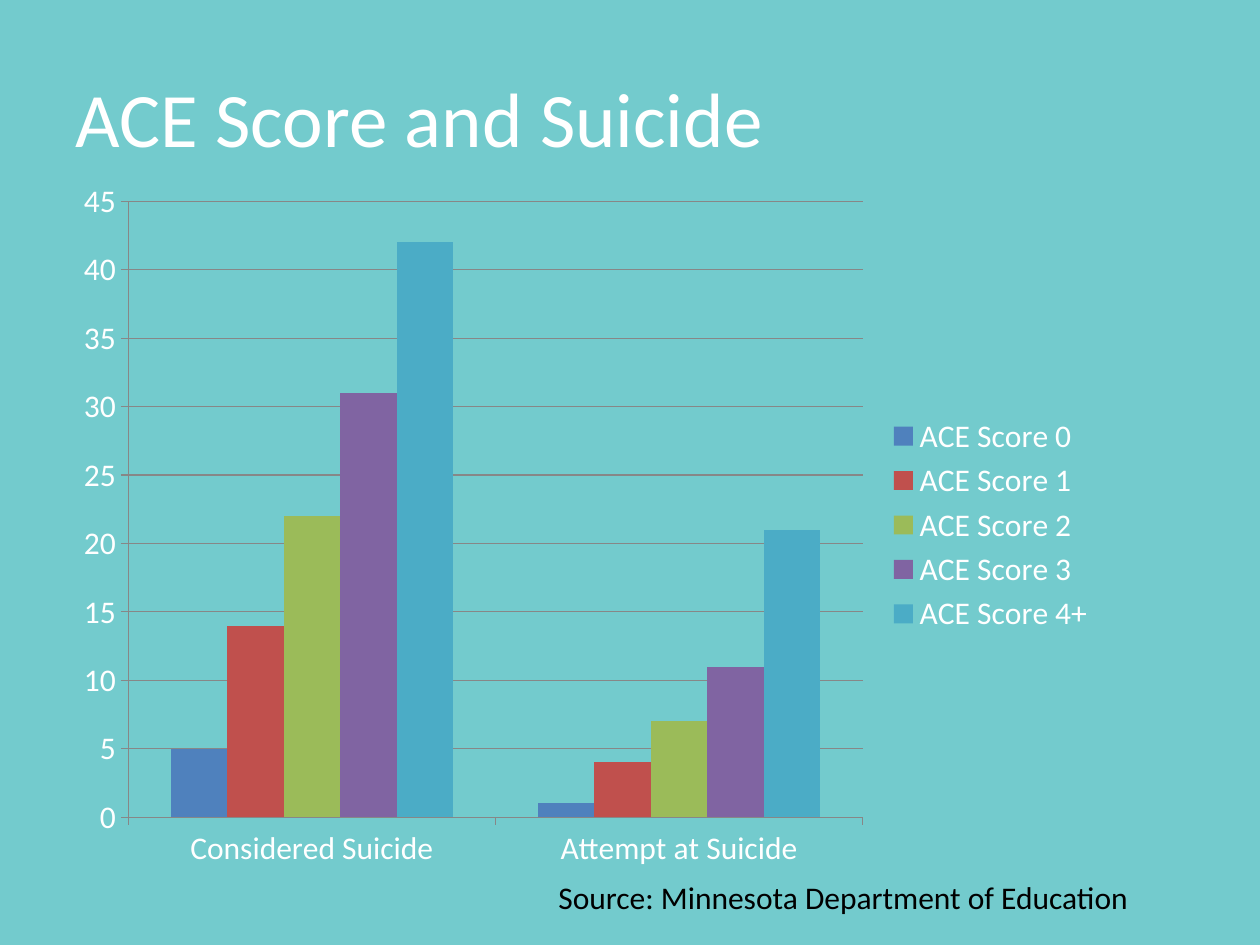
from dataclasses import dataclass

from pptx import Presentation
from pptx.chart.data import CategoryChartData
from pptx.dml.color import RGBColor
from pptx.enum.chart import XL_CHART_TYPE, XL_LEGEND_POSITION, XL_TICK_MARK
from pptx.enum.text import MSO_ANCHOR, MSO_AUTO_SIZE, PP_ALIGN
from pptx.util import Emu, Pt

PX_PER_INCH = 126


@dataclass(frozen=True)
class Theme:
    font: str = "Calibri"
    background: str = "73CBCD"
    light: str = "FFFFFF"
    dark: str = "000000"
    line: str = "878787"
    series: tuple = ("4F81BD", "C0504D", "9BBB59", "8064A2", "4BACC6")
    title_size: int = 44
    text_size: int = 18


THEME = Theme()

CATEGORIES = ("Considered Suicide", "Attempt at Suicide")
SCORES = {
    "ACE Score 0": (5, 1),
    "ACE Score 1": (14, 4),
    "ACE Score 2": (22, 7),
    "ACE Score 3": (31, 11),
    "ACE Score 4+": (42, 21),
}


def px(n):
    return Emu(round(n * 914400 / PX_PER_INCH))


def rgb(color):
    return RGBColor.from_string(color)


def style_font(font, size, color):
    font.name = THEME.font
    font.size = Pt(size)
    font.color.rgb = rgb(color)


def fill_text(tf, text, size, color):
    tf.text = text
    p = tf.paragraphs[0]
    p.alignment = PP_ALIGN.LEFT
    style_font(p.font, size, color)


def add_title(s, text, x, y, w, h):
    sp = s.shapes.title
    sp.left, sp.top, sp.width, sp.height = px(x), px(y), px(w), px(h)
    sp.text_frame.vertical_anchor = MSO_ANCHOR.MIDDLE
    fill_text(sp.text_frame, text, THEME.title_size, THEME.light)


def style_axis(axis):
    axis.major_tick_mark = XL_TICK_MARK.OUTSIDE
    axis.minor_tick_mark = XL_TICK_MARK.NONE
    axis.format.line.color.rgb = rgb(THEME.line)


def add_column_chart(s, x, y, w, h):
    data = CategoryChartData()
    data.categories = CATEGORIES
    for name, values in SCORES.items():
        data.add_series(name, values)
    chart = s.shapes.add_chart(
        XL_CHART_TYPE.COLUMN_CLUSTERED, px(x), px(y), px(w), px(h), data
    ).chart
    chart.has_title = False
    style_font(chart.font, THEME.text_size, THEME.light)

    # Columns
    plot = chart.plots[0]
    plot.gap_width = 150
    plot.overlap = 0
    plot.vary_by_categories = False
    for series, color in zip(plot.series, THEME.series):
        series.format.fill.solid()
        series.format.fill.fore_color.rgb = rgb(color)

    # Axes and gridlines
    style_axis(chart.category_axis)
    axis = chart.value_axis
    style_axis(axis)
    axis.minimum_scale, axis.maximum_scale, axis.major_unit = 0, 45, 5
    axis.has_major_gridlines = True
    axis.major_gridlines.format.line.color.rgb = rgb(THEME.line)

    # Legend
    chart.has_legend = True
    chart.legend.position = XL_LEGEND_POSITION.RIGHT
    chart.legend.include_in_layout = False


def add_source(s, text, x, y, w, h):
    tf = s.shapes.add_textbox(px(x), px(y), px(w), px(h)).text_frame
    tf.word_wrap = False
    tf.auto_size = MSO_AUTO_SIZE.SHAPE_TO_FIT_TEXT
    fill_text(tf, text, THEME.text_size, THEME.dark)


def main():
    prs = Presentation()
    prs.slide_width, prs.slide_height = px(1260), px(945)
    s = prs.slides.add_slide(prs.slide_layouts[5])
    s.background.fill.solid()
    s.background.fill.fore_color.rgb = rgb(THEME.background)

    add_title(s, "ACE Score and Suicide", 63, 38, 1134, 158)
    add_column_chart(s, 63, 168, 1045, 714)
    add_source(s, "Source: Minnesota Department of Education", 546, 872, 602, 50)
    prs.save("out.pptx")


if __name__ == "__main__":
    main()
